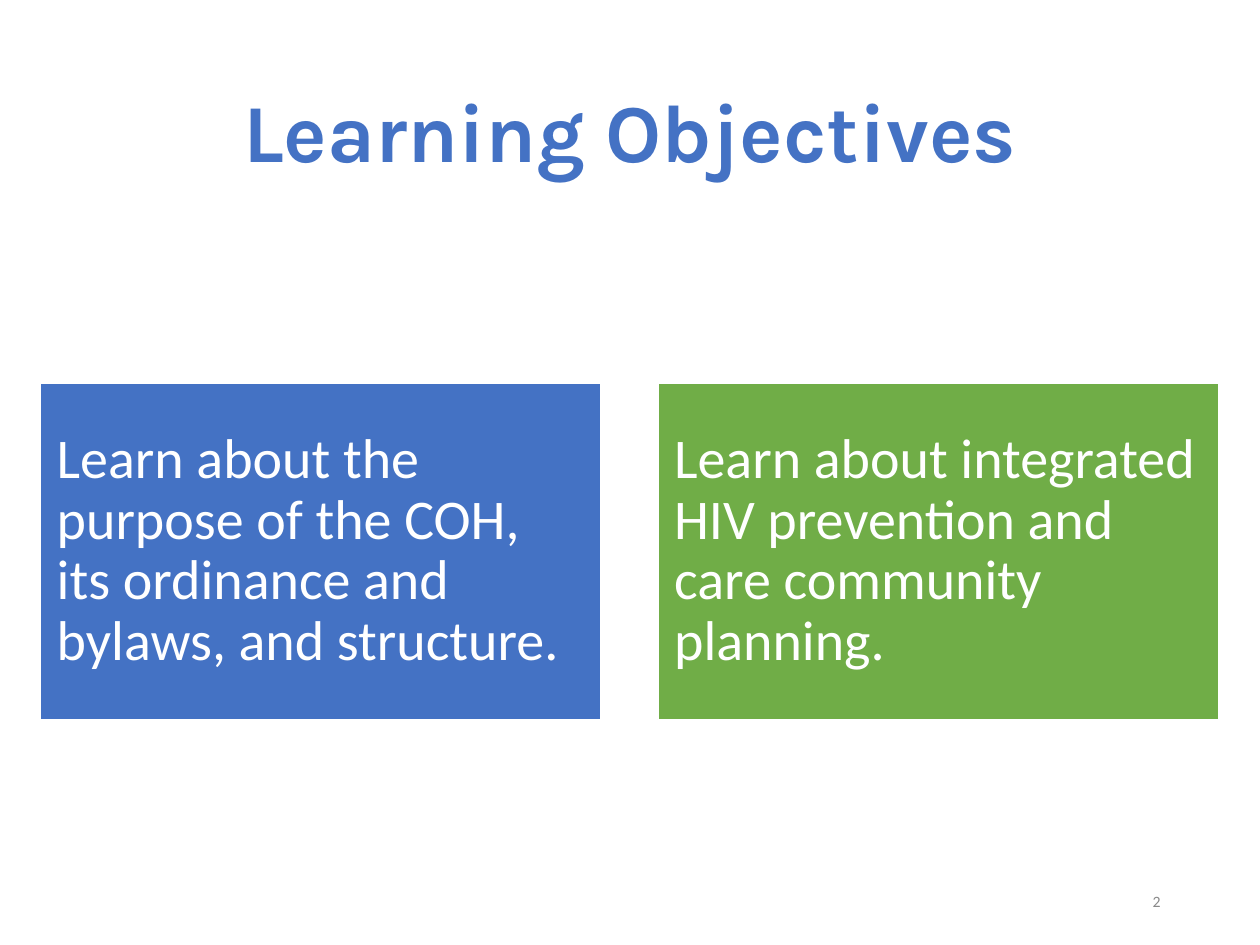
from pptx import Presentation
from pptx.dml.color import RGBColor
from pptx.enum.shapes import MSO_SHAPE
from pptx.enum.text import MSO_ANCHOR, PP_ALIGN
from pptx.util import Inches, Pt

BLUE, GREEN, WHITE, GRAY = "4472C4", "70AD47", "FFFFFF", "898989"
MARGIN = 0.32
CARD_TOP, CARD_WIDTH, CARD_HEIGHT, CARD_GAP = 3.04, 4.45, 2.67, 0.45

OBJECTIVES = [
    ("Learn about the purpose of the COH, its ordinance and bylaws, and structure.", BLUE),
    ("Learn about integrated HIV prevention and care community planning.", GREEN),
]


def rgb(color):
    return RGBColor.from_string(color)


def write(shape, text, size, color, align, font="Calibri", bold=False, spacing=0.9):
    frame = shape.text_frame
    frame.word_wrap = True
    frame.vertical_anchor = MSO_ANCHOR.MIDDLE
    frame.text = text
    paragraph = frame.paragraphs[0]
    paragraph.alignment = align
    paragraph.line_spacing = spacing
    style = paragraph.runs[0].font
    style.name, style.size, style.bold = font, Pt(size), bold
    style.color.rgb = rgb(color)


def add_label(slide, left, top, width, height, text, size, color, align, **style):
    label = slide.shapes.add_textbox(
        Inches(left), Inches(top), Inches(width), Inches(height))
    write(label, text, size, color, align, **style)


def add_card(slide, left, text, color):
    card = slide.shapes.add_shape(
        MSO_SHAPE.RECTANGLE, Inches(left), Inches(CARD_TOP),
        Inches(CARD_WIDTH), Inches(CARD_HEIGHT))
    card.shadow.inherit = False
    card.fill.solid()
    card.fill.fore_color.rgb = rgb(color)
    card.line.color.rgb = rgb(WHITE)
    card.line.width = Pt(1)
    frame = card.text_frame
    frame.margin_left = frame.margin_right = Inches(0.13)
    frame.margin_top = frame.margin_bottom = Inches(0.13)
    write(card, text, 32, WHITE, PP_ALIGN.LEFT)


def main():
    deck = Presentation()
    deck.slide_width, deck.slide_height = Inches(10), Inches(7.5)
    slide = deck.slides.add_slide(deck.slide_layouts[6])

    # Title
    add_label(slide, MARGIN, 0.35, 10 - 2 * MARGIN, 1.45, "Learning Objectives",
              47, BLUE, PP_ALIGN.CENTER, font="Karla", bold=True)

    # Page number
    add_label(slide, 7.06, 6.95, 2.25, 0.4, "2", 9, GRAY, PP_ALIGN.RIGHT, spacing=1.0)

    # Objective cards
    for column, (objective, color) in enumerate(OBJECTIVES):
        add_card(slide, MARGIN + column * (CARD_WIDTH + CARD_GAP), objective, color)

    deck.save("out.pptx")


if __name__ == "__main__":
    main()
